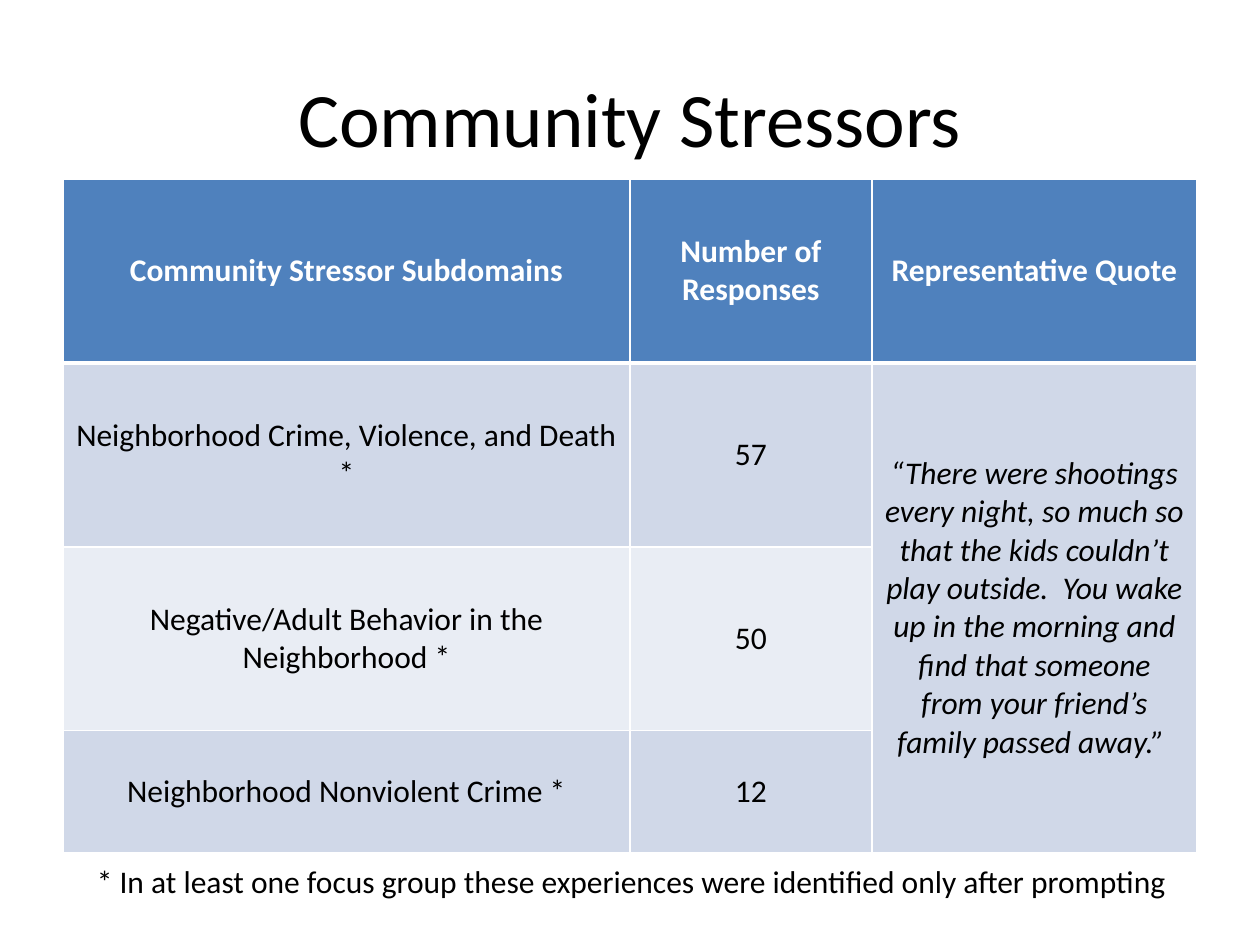
from lxml.etree import SubElement
from pptx import Presentation
from pptx.dml.color import RGBColor
from pptx.enum.text import MSO_ANCHOR, PP_ALIGN
from pptx.oxml.ns import qn
from pptx.util import Inches, Pt

COLORS = {
    "text": "000000",
    "white": "FFFFFF",
    "header": "4F81BD",
    "band_dark": "D0D8E8",
    "band_light": "E9EDF4",
}
BODY = {"name": "Calibri", "size": Pt(18), "bold": False, "italic": False}
QUOTE = ("“There were shootings every night, so much so that the kids couldn’t "
         "play outside.  You wake up in the morning and find that someone from "
         "your friend’s family passed away.” ")
ROWS = [
    ["Community Stressor Subdomains", "Number of Responses", "Representative Quote"],
    ["Neighborhood Crime, Violence, and Death *", "57", QUOTE],
    ["Negative/Adult Behavior in the Neighborhood *", "50", ""],
    ["Neighborhood Nonviolent Crime *", "12", ""],
]


class SlideBuilder:
    def __init__(self, slide):
        self.s = slide

    def add_text(self, tf, text, color="text", align=PP_ALIGN.CENTER, **changes):
        p = tf.paragraphs[0]
        p.alignment = align
        r = p.add_run()
        r.text = text
        for name, value in {**BODY, **changes}.items():
            setattr(r.font, name, value)
        r.font.color.rgb = RGBColor.from_string(COLORS[color])

    def title(self, text, *box):
        sp = self.s.shapes.title
        sp.left, sp.top, sp.width, sp.height = map(Inches, box)
        sp.text_frame.vertical_anchor = MSO_ANCHOR.MIDDLE
        self.add_text(sp.text_frame, text, size=Pt(44))

    def note(self, text, *box):
        tf = self.s.shapes.add_textbox(*map(Inches, box)).text_frame
        tf.word_wrap = True
        self.add_text(tf, text, align=PP_ALIGN.LEFT)

    def borders(self, cell, **widths):
        tc_pr = cell._tc.get_or_add_tcPr()
        for side, width in widths.items():
            ln = SubElement(tc_pr, qn(f"a:ln{side}"), w=str(Pt(width)))
            fill = SubElement(ln, qn("a:solidFill"))
            SubElement(fill, qn("a:srgbClr"), val=COLORS["white"])

    def table(self, rows, widths, heights, left, top):
        box = map(Inches, (left, top, sum(widths), sum(heights)))
        table = self.s.shapes.add_table(len(rows), len(widths), *box).table
        for column, width in zip(table.columns, widths):
            column.width = Inches(width)
        for i, (row, height) in enumerate(zip(rows, heights)):
            table.rows[i].height = Inches(height)
            header = i == 0
            band = "header" if header else "band_dark" if i % 2 else "band_light"
            for j, text in enumerate(row):
                cell = table.cell(i, j)
                cell.vertical_anchor = MSO_ANCHOR.MIDDLE
                self.borders(cell, L=1, R=1, T=3 if i == 1 else 1, B=3 if header else 1)
                cell.fill.solid()
                cell.fill.fore_color.rgb = RGBColor.from_string(COLORS[band])
                if text:
                    self.add_text(cell.text_frame, text, "white" if header else "text",
                                  bold=header, italic=text == QUOTE)
        return table


def main():
    prs = Presentation()
    prs.slide_width, prs.slide_height = Inches(10), Inches(7.5)
    builder = SlideBuilder(prs.slides.add_slide(prs.slide_layouts[5]))

    # Title
    builder.title("Community Stressors", 0.5, 0.3, 9, 1.25)

    # Stressor table, with one quote beside all the subdomains
    table = builder.table(ROWS, [4.5, 1.92, 2.58], [1.46, 1.46, 1.46, 0.97], 0.5, 1.42)
    table.cell(1, 2).merge(table.cell(3, 2))

    # Footnote
    builder.note("* In at least one focus group these experiences were identified "
                 "only after prompting", 0.67, 6.79, 8.83, 0.4)

    prs.save("out.pptx")


if __name__ == "__main__":
    main()
